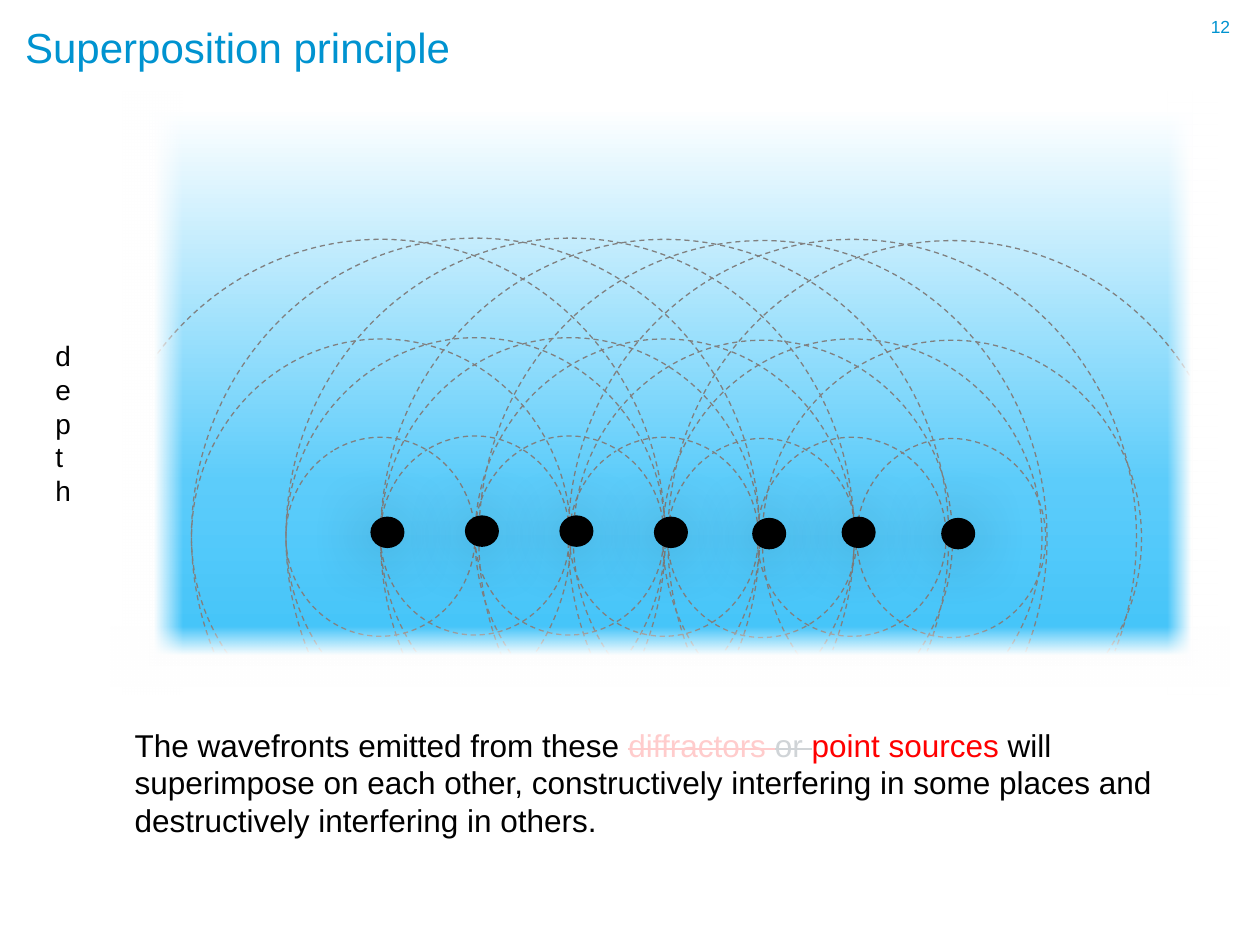
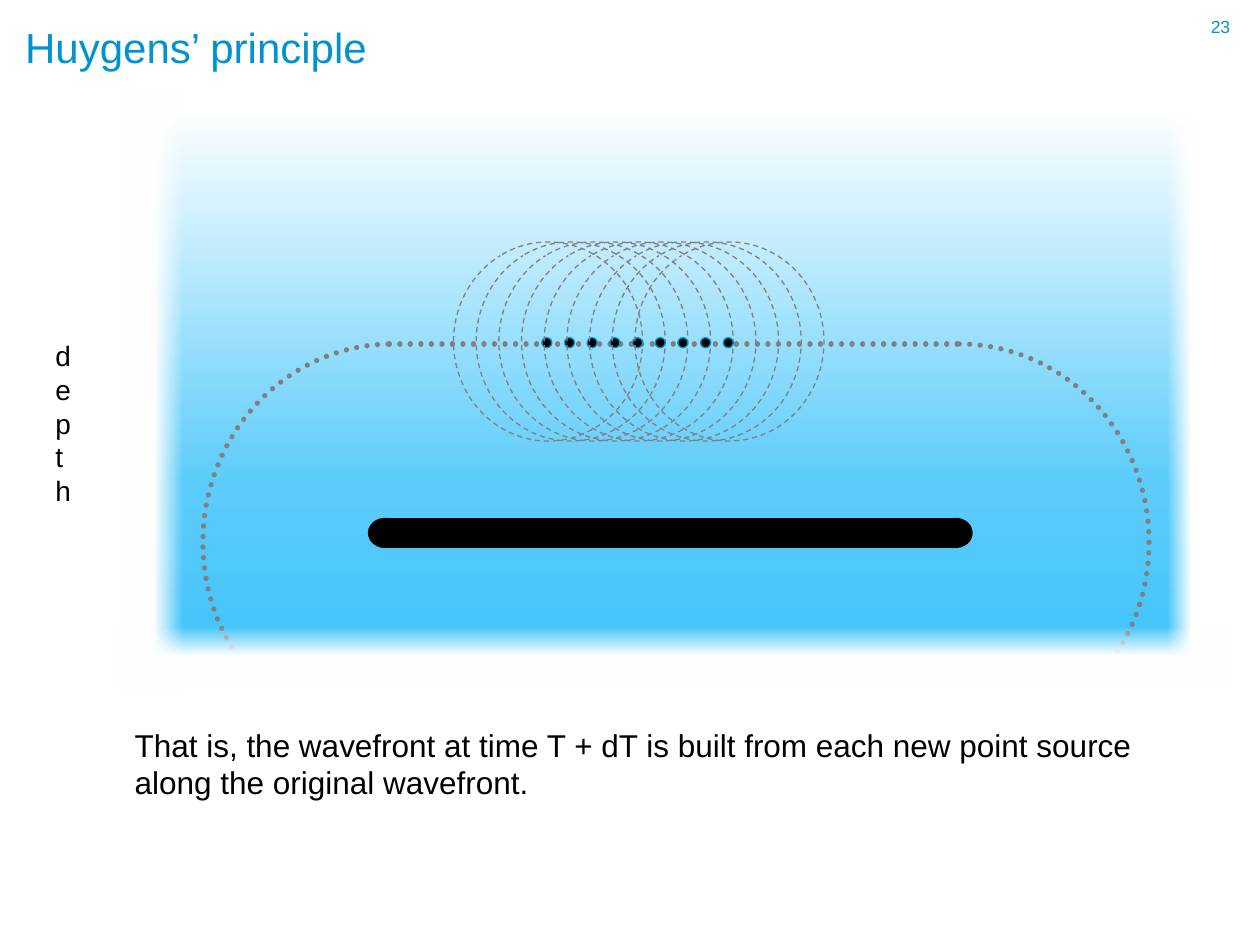
import dataclasses

import lxml.etree
import pptx
import pptx.dml.color
import pptx.enum.dml
import pptx.enum.shapes
import pptx.enum.text
import pptx.oxml.ns
import pptx.util


@dataclasses.dataclass(frozen=True)
class Theme:
    font: str = "Arial"
    accent: str = "0093D0"
    black: str = "000000"
    white: str = "FFFFFF"
    wave: str = "808080"
    red: str = "FF0000"
    faded_red: str = "FFCCCC"
    faded_grey: str = "D0D4D7"
    deep_water: str = "40C3F9"
    mid_water: str = "5CCCFA"
    title_size: int = 24
    body_size: int = 18
    label_size: int = 16
    number_size: int = 10


theme = Theme()
PX = 9144
qn = pptx.oxml.ns.qn
SHAPE = pptx.enum.shapes.MSO_SHAPE
DASH = pptx.enum.dml.MSO_LINE
RGB = pptx.dml.color.RGBColor.from_string


def add_shape(slide, kind, box, fill=None, gradient=None, line=None, angles=None):
    shape = slide.shapes.add_shape(kind, *[value * PX for value in box])
    shape.shadow.inherit = False
    if angles:
        for index, angle in enumerate(angles):
            shape.adjustments[index] = angle * 0.6
    if fill:
        shape.fill.solid()
        shape.fill.fore_color.rgb = RGB(fill)
    elif gradient:
        direction, stops = gradient
        shape.fill.gradient()
        gradient_fill = shape._element.spPr.find(qn("a:gradFill"))
        for child in list(gradient_fill):
            gradient_fill.remove(child)
        stop_list = lxml.etree.SubElement(gradient_fill, qn("a:gsLst"))
        for position, color, opacity in stops:
            stop = lxml.etree.SubElement(stop_list, qn("a:gs"), pos=str(position * 1000))
            rgb = lxml.etree.SubElement(stop, qn("a:srgbClr"), val=color)
            if opacity < 100:
                lxml.etree.SubElement(rgb, qn("a:alpha"), val=str(opacity * 1000))
        lxml.etree.SubElement(gradient_fill, qn("a:lin"), ang=str(direction * 60000), scaled="0")
    else:
        shape.fill.background()
    if line:
        color, width, dash = line
        shape.line.color.rgb = RGB(color)
        shape.line.width = pptx.util.Pt(width)
        if dash:
            shape.line.dash_style = dash
    else:
        shape.line.fill.background()
    return shape


def add_text(slide, box, runs, size, color, inset=True):
    text_box = slide.shapes.add_textbox(*[value * PX for value in box])
    frame = text_box.text_frame
    frame.word_wrap = True
    if not inset:
        frame.margin_left = frame.margin_right = frame.margin_top = frame.margin_bottom = 0
    paragraph = frame.paragraphs[0]
    paragraph.font.name = theme.font
    paragraph.font.size = pptx.util.Pt(size)
    for text, run_color, struck in runs:
        run = paragraph.add_run()
        run.text = text
        run.font.color.rgb = RGB(run_color or color)
        if struck:
            run._r.get_or_add_rPr().set("strike", "sngStrike")
    return frame


presentation = pptx.Presentation()
presentation.slide_width = 1000 * PX
presentation.slide_height = 750 * PX

pages = [
    ("Superposition principle", "12", 101, [
        ("The wavefronts emitted from these ", None, False),
        ("diffractors ", theme.faded_red, True),
        ("or ", theme.faded_grey, True),
        ("point sources ", theme.red, False),
        ("will superimpose on each other, constructively interfering in some places "
         "and destructively interfering in others.", None, False),
    ]),
    ("Huygens’ principle", "23", 71, [
        ("That is, the wavefront at time T + dT is built from each new point source "
         "along the original wavefront.", None, False),
    ]),
]
water = (270, [(0, theme.deep_water, 100), (33, theme.mid_water, 100), (100, theme.white, 100)])

for title, number, caption_height, caption in pages:
    slide = presentation.slides.add_slide(presentation.slide_layouts[6])
    frame = add_text(slide, (961, 13, 30, 26), [(number, None, False)],
                     theme.number_size, theme.accent, inset=False)
    frame.paragraphs[0].line_spacing = pptx.util.Pt(12)
    frame = add_text(slide, (20, 19, 873, 41), [(title, None, False)],
                     theme.title_size, theme.accent, inset=False)
    frame.paragraphs[0].line_spacing = 0.9
    frame.vertical_anchor = pptx.enum.text.MSO_ANCHOR.MIDDLE
    add_text(slide, (97, 571, 859, caption_height), caption, theme.body_size, theme.black)
    frame = add_text(slide, (34, 264, 49, 165), [("depth", None, False)],
                     theme.label_size, theme.black)
    frame._txBody.bodyPr.set("vert", "wordArtVert")
    add_shape(slide, SHAPE.RECTANGLE, (118, 85, 833, 444), gradient=water)

superposition, huygens = presentation.slides
dashed = (theme.wave, 0.75, DASH.DASH)
dotted = (theme.wave, 3, DASH.ROUND_DOT)
full_circle = (242.15, 240.93)

sources = [(302, 426), (377, 425), (452, 425), (527, 426), (605, 427), (676, 426), (755, 427)]
large_starts = [215.83, 154.3, 154.3, 154.3, 155.64, 154.3, 157.64]
large_ends = [23.47] * 6 + [328.28]
for (x, y), start, end in zip(sources, large_starts, large_ends):
    for width, height, angles in [
        (301, 315, (143, 36.8)),
        (451, 473, (start, end)),
        (150, 158, full_circle),
    ]:
        add_shape(superposition, SHAPE.ARC,
                  (x - width // 2, y - height // 2, width, height),
                  line=dashed, angles=angles)

for x, y in sources:
    point = add_shape(superposition, SHAPE.OVAL, (x - 8, y - 16, 27, 25), fill=theme.black)
    effects = point._element.spPr.find(qn("a:effectLst"))
    shadow = lxml.etree.SubElement(effects, qn("a:outerShdw"), blurRad=str(38 * 12700),
                                   dist=str(3 * 12700), dir=str(135 * 60000),
                                   algn="ctr", rotWithShape="0")
    shadow_color = lxml.etree.SubElement(shadow, qn("a:srgbClr"), val=theme.black)
    lxml.etree.SubElement(shadow_color, qn("a:alpha"), val="40000")

for left, right, y, color, width, dash in [
    (306, 760, 423, theme.black, 17.25, None),
    (309, 764, 273, *dotted),
]:
    connector = huygens.shapes.add_connector(
        pptx.enum.shapes.MSO_CONNECTOR.STRAIGHT, left * PX, y * PX, right * PX, y * PX)
    connector.line.color.rgb = RGB(color)
    connector.line.width = pptx.util.Pt(width)
    if dash:
        connector.line.dash_style = dash
        connector._element.spPr.find(qn("a:ln")).set("cap", "rnd")
    lxml.etree.SubElement(connector._element.spPr, qn("a:effectLst"))

for x in (292, 745):
    add_shape(huygens, SHAPE.OVAL, (x, 411, 27, 24), fill=theme.black)

for x, angles in [(611, (269.91, 39.32)), (161, (140.71, 269.87))]:
    wavefront = add_shape(huygens, SHAPE.ARC, (x, 273, 301, 315), line=dotted, angles=angles)
    wavefront._element.spPr.find(qn("a:ln")).set("cap", "rnd")

for index in range(9):
    x = 360 + 18 * index
    add_shape(huygens, SHAPE.ARC, (x, 192, 150, 158), line=dashed, angles=full_circle)
    add_shape(huygens, SHAPE.OVAL, (x + 70, 268, 8, 8), fill=theme.black,
              line=(theme.accent, 0.75, None))

for slide in presentation.slides:
    for box, direction in [
        ((97, 73, 48, 478), 180),
        ((927, 73, 39, 478), 0),
        ((88, 497, 888, 48), 90),
    ]:
        add_shape(slide, SHAPE.RECTANGLE, box,
                  gradient=(direction, [(0, theme.white, 0), (48, theme.white, 100)]))

presentation.save("out.pptx")
